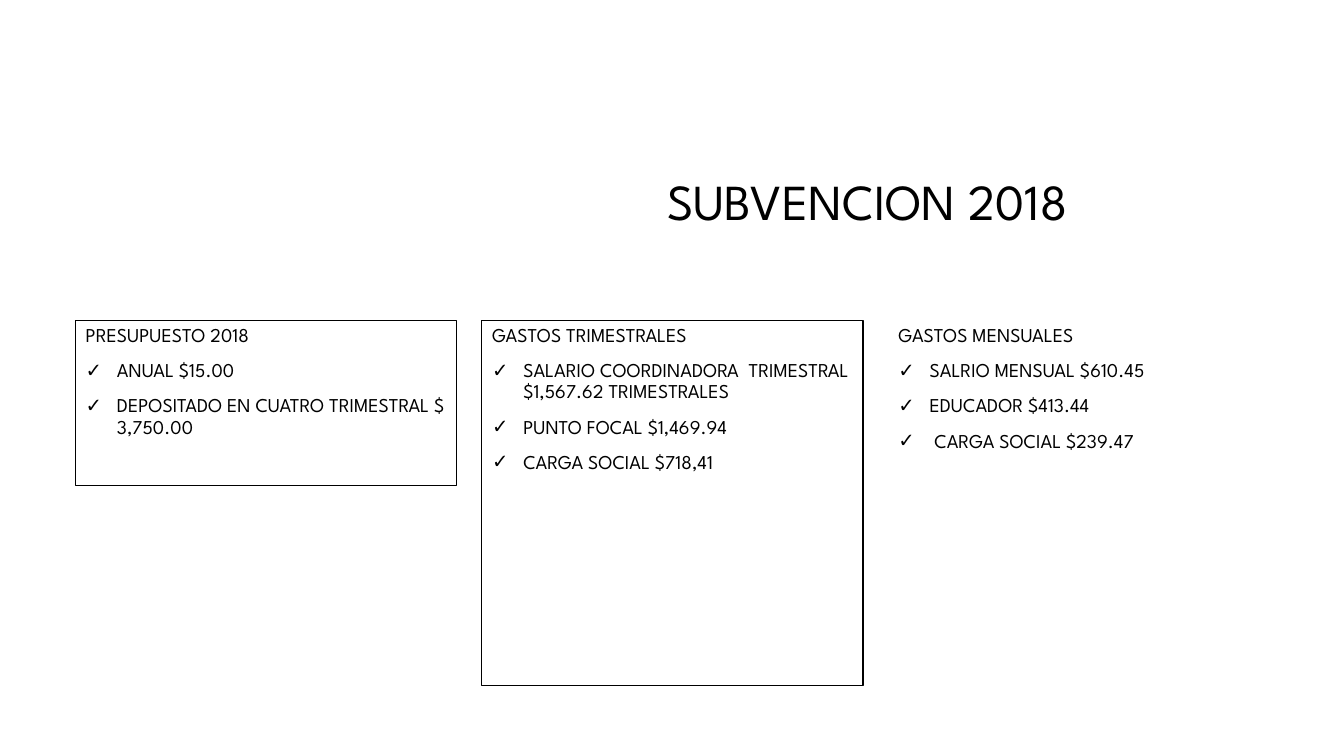
from lxml import etree
from pptx import Presentation
from pptx import util as u
from pptx.dml.color import RGBColor
from pptx.enum import text
from pptx.oxml.ns import qn

COLORS = {"ink": "000000", "background": "FFFFFF"}
COLUMN_LEFT, COLUMN_TOP, COLUMN_WIDTH, COLUMN_STEP = 0.75, 3.18, 3.78, 4.03

# Heading, items, height, outlined
BUDGET_COLUMNS = [
    ("PRESUPUESTO 2018",
     ["ANUAL $15.00", "DEPOSITADO EN CUATRO TRIMESTRAL $ 3,750.00"],
     1.64, True),
    ("GASTOS TRIMESTRALES",
     ["SALARIO COORDINADORA  TRIMESTRAL $1,567.62 TRIMESTRALES",
      "PUNTO FOCAL $1,469.94", "CARGA SOCIAL $718,41"],
     3.62, True),
    ("GASTOS MENSUALES",
     ["SALRIO MENSUAL $610.45", "EDUCADOR $413.44", " CARGA SOCIAL $239.47"],
     3.62, False),
]


class BudgetSlide:
    font = "League Spartan"

    def __init__(self, slide):
        self.slide = slide
        fill = slide.background.fill
        fill.solid()
        fill.fore_color.rgb = RGBColor.from_string(COLORS["background"])

    def place(self, holder, left, top, width, height, anchor):
        holder.left, holder.top = u.Inches(left), u.Inches(top)
        holder.width, holder.height = u.Inches(width), u.Inches(height)
        frame = holder.text_frame
        frame.word_wrap = True
        frame.auto_size = text.MSO_AUTO_SIZE.NONE
        frame.vertical_anchor = anchor
        return frame

    def add_words(self, paragraph, words, size, align, before=0):
        paragraph.alignment = align
        paragraph.line_spacing = 0.9
        paragraph.space_before = u.Pt(before)
        run = paragraph.add_run()
        run.text = words
        run.font.name = self.font
        run.font.size = u.Pt(size)
        run.font.bold = False
        run.font.color.rgb = RGBColor.from_string(COLORS["ink"])

    def set_bullet(self, paragraph, mark=None):
        """Give a hanging bullet, or clear the inherited one if no mark is given."""
        props = paragraph._p.get_or_add_pPr()
        indent = u.Inches(0.31) if mark else 0
        props.set("marL", str(indent))
        props.set("indent", str(-indent))
        if mark:
            etree.SubElement(props, qn("a:buChar")).set("char", mark)
        else:
            etree.SubElement(props, qn("a:buNone"))

    def title(self, words, *box):
        frame = self.place(self.slide.shapes.title, *box, text.MSO_ANCHOR.MIDDLE)
        self.add_words(frame.paragraphs[0], words, 36, text.PP_ALIGN.RIGHT)

    def column(self, holder, left, heading, items, height, outlined):
        frame = self.place(holder, left, COLUMN_TOP, COLUMN_WIDTH, height,
                           text.MSO_ANCHOR.TOP)
        if outlined:
            holder.line.color.rgb = RGBColor.from_string(COLORS["ink"])
            holder.line.width = u.Pt(0.75)
        self.set_bullet(frame.paragraphs[0])
        self.add_words(frame.paragraphs[0], heading, 14, text.PP_ALIGN.LEFT)
        for item in items:
            entry = frame.add_paragraph()
            self.set_bullet(entry, "✓")
            self.add_words(entry, item, 14, text.PP_ALIGN.LEFT, before=10)


def main():
    deck = Presentation()
    deck.slide_width, deck.slide_height = u.Inches(13.33), u.Inches(7.5)
    slide = deck.slides.add_slide(deck.slide_layouts.get_by_name("Comparison"))
    budget = BudgetSlide(slide)
    budget.title("SUBVENCION 2018", 2.64, 1.76, 8.05, 0.54)

    *bodies, spare = list(slide.placeholders)[1:]
    for i, (body, column) in enumerate(zip(bodies, BUDGET_COLUMNS)):
        budget.column(body, COLUMN_LEFT + i * COLUMN_STEP, *column)
    spare.element.getparent().remove(spare.element)
    deck.save("out.pptx")


if __name__ == "__main__":
    main()
